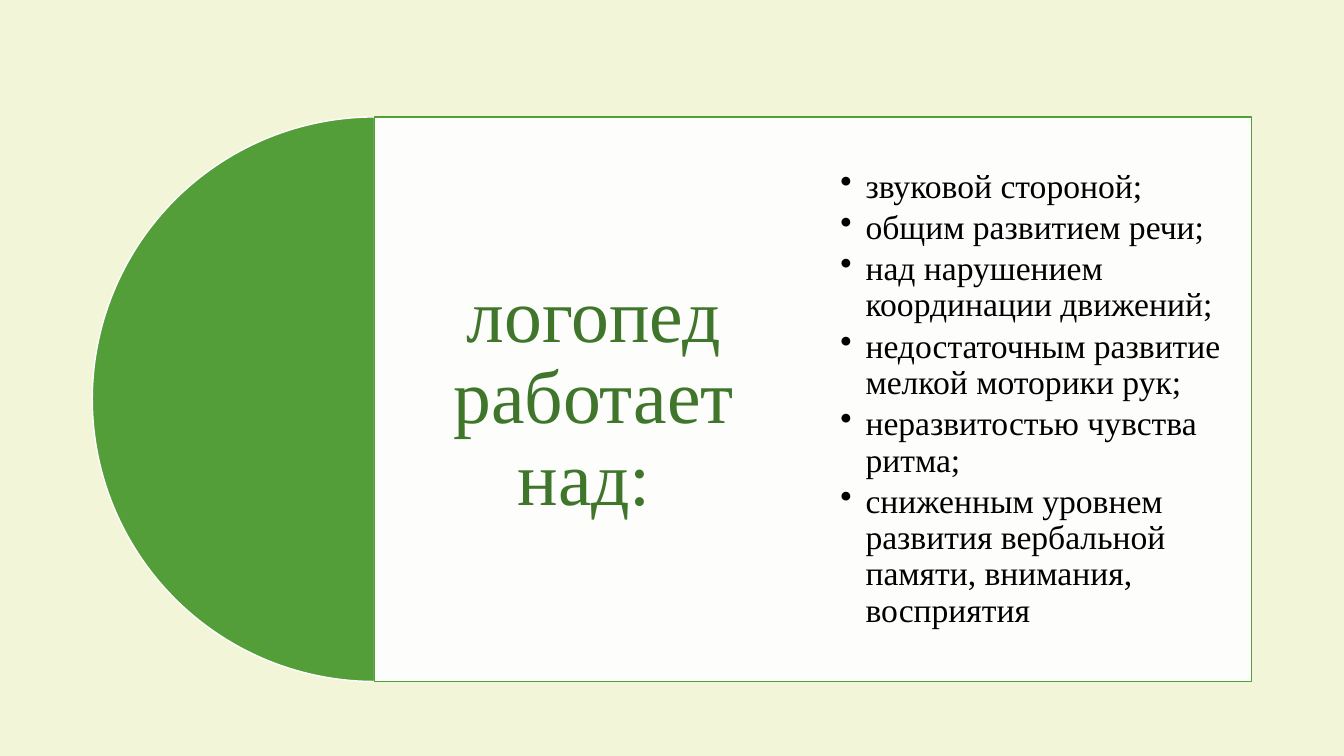
import pptx
import pptx.dml.color
import pptx.enum.shapes
import pptx.enum.text
import pptx.oxml.ns
import pptx.util
from lxml import etree

CREAM = pptx.dml.color.RGBColor(0xF2, 0xF5, 0xD8)
GREEN = pptx.dml.color.RGBColor(0x54, 0x9E, 0x39)
DARK_GREEN = pptx.dml.color.RGBColor(0x3F, 0x76, 0x2B)
WHITE = pptx.dml.color.RGBColor(0xFF, 0xFF, 0xFF)
BLACK = pptx.dml.color.RGBColor(0x00, 0x00, 0x00)

SHAPE = pptx.enum.shapes.MSO_SHAPE
ALIGN = pptx.enum.text.PP_ALIGN
FONT = "Times New Roman"

# Percent of the slide's width or height
DISC_LEFT, DISC_WIDTH = 6.87, 42
BAND_TOP, BAND_HEIGHT = 15.47, 74.67
PANEL_LEFT = DISC_LEFT + DISC_WIDTH / 2
COLUMN_WIDTH = 32.63

HEADING = "логопед работает над: "
TASKS = [
    "звуковой стороной;",
    "общим развитием речи;",
    "над нарушением координации движений;",
    "недостаточным развитие мелкой моторики рук;",
    "неразвитостью чувства ритма;",
    "сниженным уровнем развития вербальной памяти, внимания, восприятия",
]


def set_values(target, values):
    for name, value in values.items():
        setattr(target, name, value)


class SlideBuilder:
    """Holds the deck, its current slide and the shared band layout."""

    def __init__(self):
        self.deck = pptx.Presentation()
        set_values(self.deck, {
            "slide_width": pptx.util.Inches(13.33),
            "slide_height": pptx.util.Inches(7.5),
        })
        self.slide = self.deck.slides.add_slide(self.deck.slide_layouts[5])
        fill = self.slide.background.fill
        fill.solid()
        fill.fore_color.rgb = CREAM

    def band(self, left, width):
        """Left, top, width and height of a part of the band."""
        across, down = self.deck.slide_width / 100, self.deck.slide_height / 100
        return [round(length) for length in (
            left * across, BAND_TOP * down, width * across, BAND_HEIGHT * down)]

    def shape(self, kind, left, width, color, outline, opacity=100):
        shape = self.slide.shapes.add_shape(kind, *self.band(left, width))
        shape.shadow.inherit = False
        shape.fill.solid()
        shape.fill.fore_color.rgb = color
        shape.line.color.rgb = outline
        shape.line.width = pptx.util.Pt(1)
        if opacity < 100:
            tag = pptx.oxml.ns.qn("a:srgbClr")
            color_node = next(shape.fill._xPr.iter(tag))
            alpha = etree.SubElement(color_node, pptx.oxml.ns.qn("a:alpha"))
            alpha.set("val", str(opacity * 1000))
        return shape

    def text(self, box, lines, size, color, inset, align, space_after, bullet=False):
        frame = box.text_frame
        set_values(frame, {
            "word_wrap": True,
            "auto_size": pptx.enum.text.MSO_AUTO_SIZE.NONE,
            "vertical_anchor": pptx.enum.text.MSO_ANCHOR.MIDDLE,
        })
        set_values(frame, {f"margin_{side}": pptx.util.Inches(inset)
                           for side in ("left", "top", "right", "bottom")})
        for number, line in enumerate(lines):
            para = frame.add_paragraph() if number else frame.paragraphs[0]
            set_values(para, {
                "alignment": align,
                "line_spacing": 0.9,
                "space_before": pptx.util.Pt(0),
                "space_after": pptx.util.Pt(size * space_after),
            })
            if bullet:
                self.add_bullet(para)
            span = para.add_run()
            span.text = line
            set_values(span.font, {"name": FONT, "size": pptx.util.Pt(size)})
            span.font.color.rgb = color

    def add_bullet(self, para):
        properties = para._p.get_or_add_pPr()
        hang = pptx.util.Inches(0.25)
        properties.set("marL", str(hang))
        properties.set("indent", str(-hang))
        mark = etree.SubElement(properties, pptx.oxml.ns.qn("a:buChar"))
        mark.set("char", "•")

    def title(self, left, width, line, **style):
        box = self.slide.shapes.title
        names = ("left", "top", "width", "height")
        set_values(box, dict(zip(names, self.band(left, width))))
        # The title stands in front of the panel
        box.element.getparent().append(box.element)
        self.text(box, [line], **style)

    def bullets(self, left, width, lines, **style):
        box = self.slide.shapes.add_textbox(*self.band(left, width))
        self.text(box, lines, bullet=True, **style)


def main():
    builder = SlideBuilder()
    half_disc = builder.shape(SHAPE.PIE, DISC_LEFT, DISC_WIDTH, GREEN, WHITE)
    half_disc.adjustments[0] = 54
    half_disc.adjustments[1] = 162
    builder.shape(SHAPE.RECTANGLE, PANEL_LEFT, 2 * COLUMN_WIDTH, WHITE, GREEN,
                  opacity=90)
    builder.title(PANEL_LEFT, COLUMN_WIDTH, HEADING, size=54, color=DARK_GREEN,
                  inset=0.23, align=ALIGN.CENTER, space_after=0.35)
    builder.bullets(PANEL_LEFT + COLUMN_WIDTH, COLUMN_WIDTH, TASKS, size=24,
                    color=BLACK, inset=0.27, align=ALIGN.LEFT, space_after=0.15)
    builder.deck.save("out.pptx")


if __name__ == "__main__":
    main()
